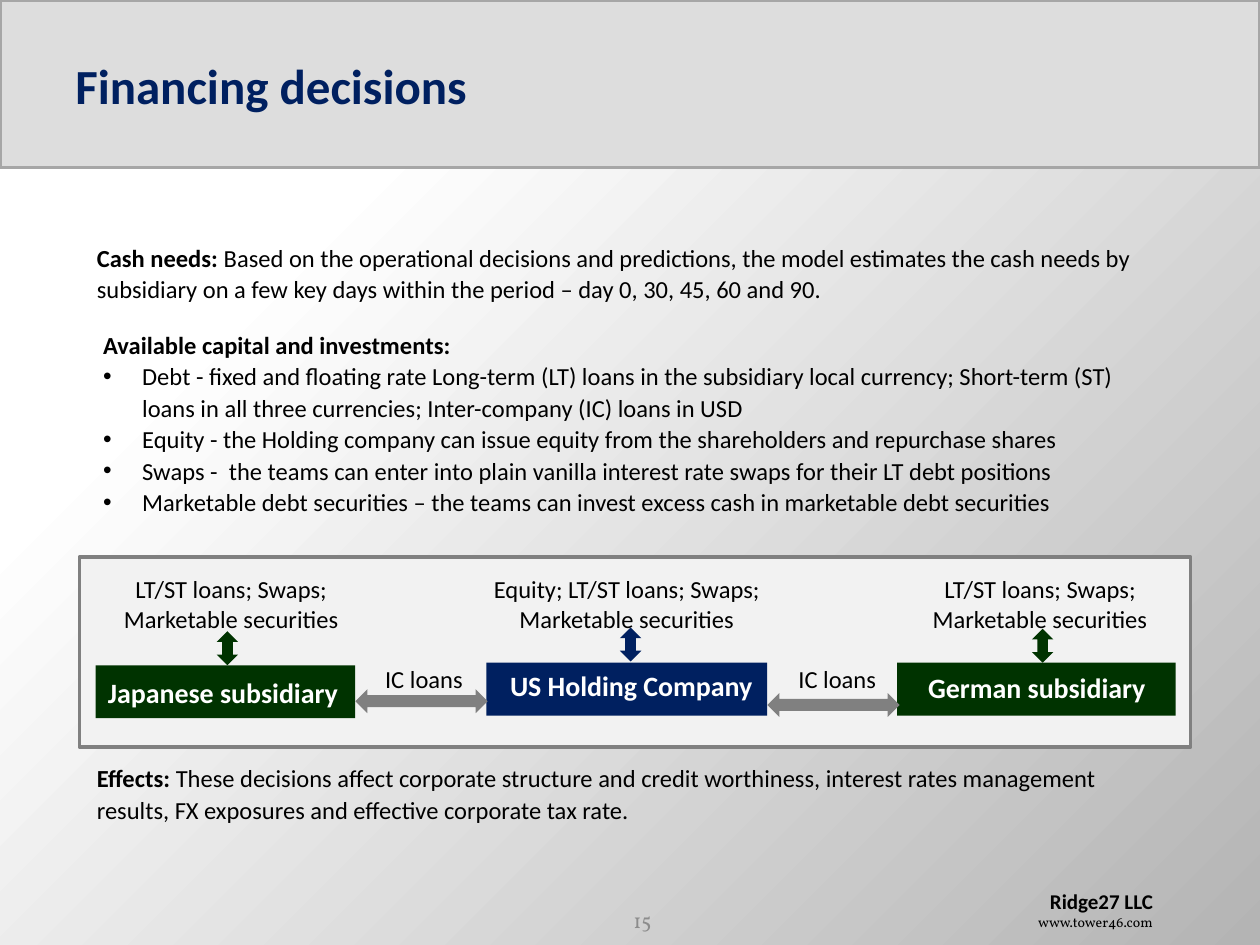
import pptx
import pptx.util
import pptx.dml.color
import pptx.enum.shapes
import pptx.enum.text
import pptx.oxml
import pptx.oxml.ns

Inches, Pt = pptx.util.Inches, pptx.util.Pt
SHAPE = pptx.enum.shapes.MSO_SHAPE
ALIGN = pptx.enum.text.PP_ALIGN
ANCHOR = pptx.enum.text.MSO_ANCHOR
NS = pptx.oxml.ns.nsdecls("a")
GREEN, NAVY, GREY = "003300", "002060", "808080"

deck = pptx.Presentation()
deck.slide_width, deck.slide_height = Inches(10), Inches(7.5)
slide = deck.slides.add_slide(deck.slide_layouts[6])


def rgb(code):
    return pptx.dml.color.RGBColor.from_string(code)


def add_text(box, text, size=14, font="Calibri", color="000000", bold=False,
             align=ALIGN.LEFT, spacing=None, lead="", bullet=False, new_box=True):
    """Write text, after an optional bold lead, in a new box or as a further paragraph."""
    if new_box:
        box = slide.shapes.add_textbox(*map(Inches, box))
        box.text_frame.word_wrap = True
        paragraph = box.text_frame.paragraphs[0]
    else:
        paragraph = box.text_frame.add_paragraph()
    if bullet:
        props = paragraph._p.get_or_add_pPr()
        props.set("marL", str(Inches(0.31)))
        props.set("indent", str(-Inches(0.31)))
        props.append(pptx.oxml.parse_xml(f'<a:buFont {NS} typeface="Arial"/>'))
        props.append(pptx.oxml.parse_xml(f'<a:buChar {NS} char="•"/>'))
    paragraph.alignment = align
    if spacing:
        paragraph.line_spacing = Pt(spacing)
    for words, is_bold in ((lead, True), (text, bold)):
        if words:
            run = paragraph.add_run()
            run.text = words
            run.font.size, run.font.name, run.font.bold = Pt(size), font, is_bold
            run.font.color.rgb = rgb(color)
    return box


# Background: radial gradient from the top left corner
background = slide.background.fill
background.gradient()
for stop, (position, color) in zip(background.gradient_stops, ((0.24, "FFFFFF"), (1, "B4B4B4"))):
    stop.position = position
    stop.color.rgb = rgb(color)
linear = slide.element.find(".//" + pptx.oxml.ns.qn("a:lin"))
linear.getparent().replace(linear, pptx.oxml.parse_xml(
    f'<a:path {NS} path="circle"><a:fillToRect r="100000" b="100000"/></a:path>'))

# Header band, diagram panel, company blocks and arrows
for kind, place, fill, line in (
    (SHAPE.RECTANGLE, (0, 0, 10, 1.33), "DDDDDD", "A6A6A6"),
    (SHAPE.RECTANGLE, (0.63, 4.42, 8.82, 1.51), "F2F2F2", GREY),
    (SHAPE.RECTANGLE, (0.76, 5.28, 2.06, 0.42), GREEN, None),
    (SHAPE.RECTANGLE, (3.86, 5.26, 2.23, 0.42), NAVY, None),
    (SHAPE.RECTANGLE, (7.12, 5.26, 2.21, 0.42), GREEN, None),
    (SHAPE.UP_DOWN_ARROW, (1.72, 5.01, 0.17, 0.27), GREEN, None),
    (SHAPE.UP_DOWN_ARROW, (4.92, 4.98, 0.17, 0.27), NAVY, None),
    (SHAPE.UP_DOWN_ARROW, (8.19, 4.99, 0.17, 0.27), GREEN, None),
    (SHAPE.LEFT_RIGHT_ARROW, (2.82, 5.47, 1.05, 0.19), GREY, None),
    (SHAPE.LEFT_RIGHT_ARROW, (6.09, 5.5, 1.05, 0.19), GREY, None),
):
    block = slide.shapes.add_shape(kind, *map(Inches, place))
    block.shadow.inherit = False
    block.fill.solid()
    block.fill.fore_color.rgb = rgb(fill)
    if line:
        block.line.color.rgb = rgb(line)
        block.line.width = Pt(2)
    else:
        block.line.fill.background()

# Company names
for name, place, align in (
    ("Japanese subsidiary", (0.72, 5.31, 2.1, 0.37), ALIGN.CENTER),
    ("US Holding Company", (3.95, 5.26, 2.14, 0.37), ALIGN.LEFT),
    ("German subsidiary", (7.18, 5.27, 2.1, 0.37), ALIGN.CENTER),
):
    add_text(place, name, size=16, color="FFFFFF", bold=True, align=align)

# Instruments above each company, and loans between companies
for left, width, instruments in (
    (0.72, 2.23, "LT/ST loans; Swaps;"),
    (3.61, 2.73, "Equity; LT/ST loans; Swaps;"),
    (6.89, 2.73, "LT/ST loans; Swaps;"),
):
    sources = add_text((left, 4.51, width, 0.57), instruments, align=ALIGN.CENTER)
    add_text(sources, "Marketable securities", align=ALIGN.CENTER, new_box=False)
for left, width in ((2.86, 1.01), (6.1, 1.09)):
    add_text((left, 5.22, width, 0.34), "IC loans", align=ALIGN.CENTER)

# Title
title = add_text((0.5, 0.05, 9, 1.25), "Financing decisions", size=28, color=NAVY, bold=True)
title.text_frame.vertical_anchor = ANCHOR.MIDDLE

# Body text
add_text((0.67, 1.86, 8.61, 0.91),
         "Based on the operational decisions and predictions, the model estimates the cash "
         "needs by subsidiary on a few key days within the period – day 0, 30, 45, 60 and 90.",
         lead="Cash needs: ", spacing=18)
capital = add_text((0.72, 2.55, 8.61, 1.62), "Available capital and investments:",
                   bold=True, spacing=18)
for item in (
    "Debt - fixed and floating rate Long-term (LT) loans in the subsidiary local currency; "
    "Short-term (ST) loans in all three currencies; Inter-company (IC) loans in USD",
    "Equity - the Holding company can issue equity from the shareholders and repurchase shares",
    "Swaps -  the teams can enter into plain vanilla interest rate swaps for their LT debt positions",
    "Marketable debt securities – the teams can invest excess cash in marketable debt securities",
):
    add_text(capital, item, spacing=18, bullet=True, new_box=False)
add_text((0.67, 5.99, 8.61, 0.91),
         "These decisions affect corporate structure and credit worthiness, interest rates "
         "management results, FX exposures and effective corporate tax rate.",
         lead="Effects: ", spacing=18)

# Footer: page number and publisher
page = add_text((4.73, 7.1, 0.54, 0.4), "15", size=12, font="Vollkorn", color="8C8C8C",
                align=ALIGN.RIGHT)
page.text_frame.vertical_anchor = ANCHOR.MIDDLE
publisher = add_text((8, 7, 1.25, 0.44), "Ridge27 LLC", size=12, bold=True, align=ALIGN.RIGHT)
add_text(publisher, "www.tower46.com", size=8, font="Vollkorn", align=ALIGN.RIGHT, new_box=False)

deck.save("out.pptx")
